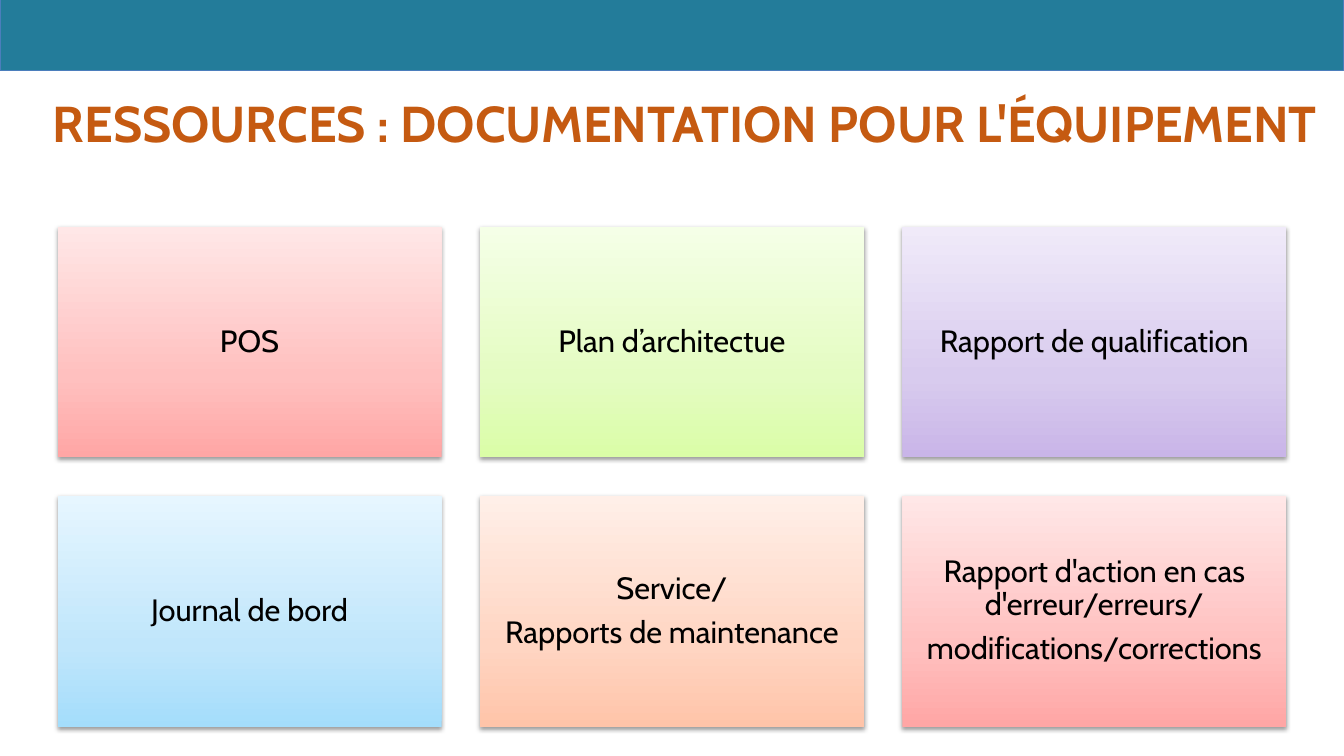
import dataclasses

import pptx
import pptx.dml.color
import pptx.enum.shapes
import pptx.enum.text
import pptx.oxml
import pptx.oxml.ns
import pptx.shapes.autoshape
import pptx.slide
import pptx.text.text
import pptx.util

Pt = pptx.util.Pt
Hues = tuple[str, str, str]

COLORS = {"banner": "237C9A", "banner_edge": "4B7EBC", "title": "C55A11", "text": "000000"}
GRADIENTS: dict[str, Hues] = {
    "red": ("FFA6A5", "FFC0BF", "FFE7E7"),
    "green": ("DAFDA7", "E4FCC2", "F5FFE7"),
    "purple": ("C9B5E8", "D8CBEE", "F0EAF9"),
    "blue": ("A4DDFB", "C0E6FB", "E6F6FF"),
    "orange": ("FFC4A9", "FFD5C2", "FFEFE8"),
}
STOP_POSITIONS = (0, 35, 100)
FONT = "Cabin"
COLUMNS = 3
GRID_LEFT, GRID_TOP = 41.1, 162
CARD_WIDTH, CARD_HEIGHT, GAP = 274.3, 164.8, 27.4


@dataclasses.dataclass(frozen=True)
class Document:
    """A kind of equipment document shown on a card."""

    lines: tuple[str, ...]
    hue: str


DOCUMENTS = (
    Document(("POS",), "red"),
    Document(("Plan d’architectue",), "green"),
    Document(("Rapport de qualification",), "purple"),
    Document(("Journal de bord",), "blue"),
    Document(("Service/", "Rapports de maintenance"), "orange"),
    Document(("Rapport d'action en cas d'erreur/erreurs/", "modifications/corrections"), "red"),
)


def rgb(name: str) -> pptx.dml.color.RGBColor:
    """Return the named colour."""
    return pptx.dml.color.RGBColor.from_string(COLORS[name])


def write(
    frame: pptx.text.text.TextFrame,
    lines: tuple[str, ...],
    *,
    size: float,
    color: str,
    insets: tuple[float, float, float, float],
    bold: bool = False,
    wrap: bool = True,
    middle: bool = False,
    line_spacing: float = 1.0,
    space_after: float = 0,
) -> None:
    """Write centred paragraphs into a text frame."""
    anchors = pptx.enum.text.MSO_ANCHOR
    frame.word_wrap = wrap
    frame.vertical_anchor = anchors.MIDDLE if middle else anchors.TOP
    frame.margin_left, frame.margin_top, frame.margin_right, frame.margin_bottom = map(Pt, insets)
    for index, line in enumerate(lines):
        paragraph = frame.add_paragraph() if index else frame.paragraphs[0]
        paragraph.alignment = pptx.enum.text.PP_ALIGN.CENTER
        paragraph.line_spacing = line_spacing
        paragraph.space_after = Pt(space_after)
        run = paragraph.add_run()
        run.text = line
        run.font.name = FONT
        run.font.size = Pt(size)
        run.font.bold = bold
        run.font.color.rgb = rgb(color)


def add_rectangle(
    slide: pptx.slide.Slide, left: float, top: float, width: float, height: float
) -> pptx.shapes.autoshape.Shape:
    """Add a rectangle without the theme shadow."""
    rectangle = slide.shapes.add_shape(
        pptx.enum.shapes.MSO_SHAPE.RECTANGLE, Pt(left), Pt(top), Pt(width), Pt(height)
    )
    rectangle.shadow.inherit = False
    return rectangle


def shade(card: pptx.shapes.autoshape.Shape, hues: Hues) -> None:
    """Give a card its upward gradient and soft drop shadow."""
    card.fill.gradient()
    card.fill.gradient_angle = 90
    namespace = pptx.oxml.ns.nsdecls("a")
    properties = card._element.spPr
    stops = properties.find(".//" + pptx.oxml.ns.qn("a:gsLst"))
    stops[:] = [
        pptx.oxml.parse_xml(
            f'<a:gs {namespace} pos="{position * 1000}"><a:srgbClr val="{hue}"/></a:gs>'
        )
        for position, hue in zip(STOP_POSITIONS, hues)
    ]
    properties.find(pptx.oxml.ns.qn("a:effectLst")).append(
        pptx.oxml.parse_xml(
            f'<a:outerShdw {namespace} blurRad="{Pt(3.1)}" dist="{Pt(1.6)}" dir="5400000" '
            'rotWithShape="0"><a:srgbClr val="000000"><a:alpha val="38000"/></a:srgbClr>'
            "</a:outerShdw>"
        )
    )


def add_card(slide: pptx.slide.Slide, position: int, document: Document) -> None:
    """Add a document card at its place in the grid."""
    row, column = divmod(position, COLUMNS)
    left = GRID_LEFT + column * (CARD_WIDTH + GAP)
    top = GRID_TOP + row * (CARD_HEIGHT + GAP)
    card = add_rectangle(slide, left, top, CARD_WIDTH, CARD_HEIGHT)
    shade(card, GRADIENTS[document.hue])
    card.line.fill.background()
    write(
        card.text_frame,
        document.lines,
        size=22,
        color="text",
        insets=(6.6, 6.6, 6.6, 6.6),
        middle=True,
        line_spacing=0.9,
        space_after=7.7,
    )


def main() -> None:
    """Build and save the equipment documentation slide."""
    deck = pptx.Presentation()
    deck.slide_width, deck.slide_height = Pt(960), Pt(540)
    slide = deck.slides.add_slide(deck.slide_layouts[6])

    banner = add_rectangle(slide, 0, 0, 960, 50.4)
    banner.fill.solid()
    banner.fill.fore_color.rgb = rgb("banner")
    banner.line.color.rgb = rgb("banner_edge")
    banner.line.width = Pt(0.75)

    title = slide.shapes.add_textbox(Pt(30.2), Pt(61.9), Pt(918), Pt(46.8))
    write(
        title.text_frame,
        ("RESSOURCES : DOCUMENTATION POUR L'ÉQUIPEMENT",),
        size=36,
        color="title",
        insets=(7.2, 3.6, 7.2, 0),
        bold=True,
        wrap=False,
    )

    for position, document in enumerate(DOCUMENTS):
        add_card(slide, position, document)
    deck.save("out.pptx")


if __name__ == "__main__":
    main()
